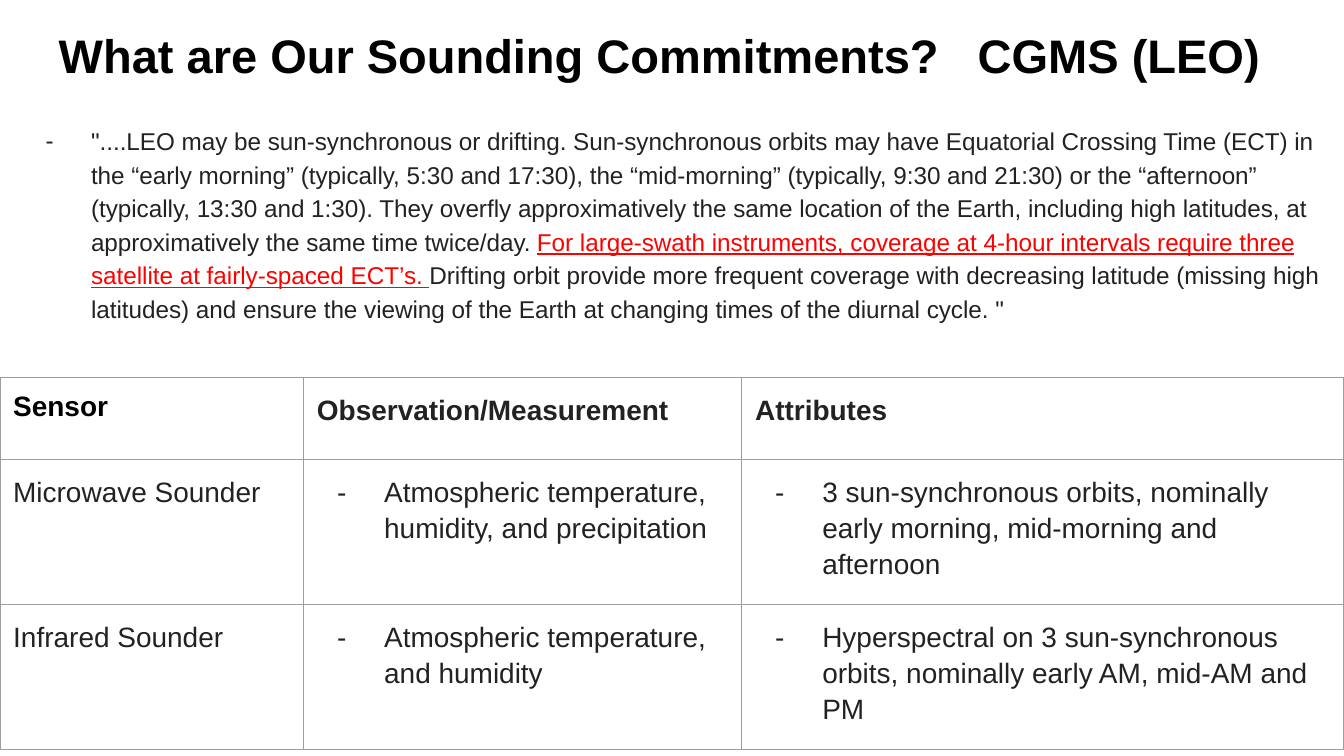
"""Build a slide on low Earth orbit sounding commitments with a sensor table."""
from dataclasses import dataclass

from lxml.etree import SubElement
from pptx import Presentation
from pptx.dml.color import RGBColor
from pptx.enum.text import MSO_ANCHOR, MSO_AUTO_SIZE, PP_ALIGN
from pptx.oxml.ns import qn
from pptx.util import Cm, Pt

BLACK = RGBColor(0x00, 0x00, 0x00)
INK = RGBColor(0x22, 0x22, 0x22)
RED = RGBColor(0xFF, 0x00, 0x00)
GRID = RGBColor(0x9E, 0x9E, 0x9E)
FONT = "Arial"
MARGIN = Cm(0.25)
INDENT = Cm(1.27)
LINE_SPACING = 1.15


@dataclass(frozen=True)
class Span:
    text: str
    color: RGBColor = INK
    underline: bool = False


@dataclass(frozen=True)
class Sensor:
    name: str
    measurement: str
    attributes: str


TITLE = "What are Our Sounding Commitments?   CGMS (LEO)"
QUOTE = (
    Span(
        '"....LEO may be sun-synchronous or drifting. Sun-synchronous orbits may have '
        "Equatorial Crossing Time (ECT) in the “early morning” (typically, 5:30 and 17:30), "
        "the “mid-morning” (typically, 9:30 and 21:30) or the “afternoon” (typically, 13:30 "
        "and 1:30). They overfly approximatively the same location of the Earth, including "
        "high latitudes, at approximatively the same time twice/day. "
    ),
    Span(
        "For large-swath instruments, coverage at 4-hour intervals require three "
        "satellite at fairly-spaced ECT’s. ",
        RED,
        True,
    ),
    Span(
        "Drifting orbit provide more frequent coverage with decreasing latitude (missing "
        "high latitudes) and ensure the viewing of the Earth at changing times of the "
        'diurnal cycle. "'
    ),
)
HEADINGS = ("Sensor", "Observation/Measurement", "Attributes")
SENSORS = (
    Sensor(
        "Microwave Sounder",
        "Atmospheric temperature, humidity, and precipitation",
        "3 sun-synchronous orbits, nominally early morning, mid-morning and afternoon",
    ),
    Sensor(
        "Infrared Sounder",
        "Atmospheric temperature, and humidity",
        "Hyperspectral on 3 sun-synchronous orbits, nominally early AM, mid-AM and PM",
    ),
)
COLUMN_WIDTHS = (Cm(5.74), Cm(8.28), Cm(11.38))
ROW_HEIGHTS = (Cm(1.55), Cm(2.74), Cm(2.74))


def place(box, left: Cm, top: Cm, width: Cm, height: Cm) -> None:
    """Move a placeholder and give it fixed, top-anchored text."""
    box.left, box.top, box.width, box.height = left, top, width, height
    frame = box.text_frame
    frame.word_wrap = True
    frame.auto_size = MSO_AUTO_SIZE.NONE
    frame.vertical_anchor = MSO_ANCHOR.TOP
    set_margins(frame)


def set_margins(holder) -> None:
    """Give a text frame or cell equal margins."""
    holder.margin_left = holder.margin_right = MARGIN
    holder.margin_top = holder.margin_bottom = MARGIN


def set_font(para, size: float, color: RGBColor, bold: bool = False) -> None:
    """Set the font shared by a whole paragraph."""
    para.font.name = FONT
    para.font.size = Pt(size)
    para.font.bold = bold
    para.font.color.rgb = color


def add_dash(para, hang: Cm) -> None:
    """Give a paragraph a hanging dash bullet."""
    properties = para._p.get_or_add_pPr()
    properties.set("marL", str(INDENT))
    properties.set("indent", str(-hang))
    color = SubElement(properties, qn("a:buClr"))
    SubElement(color, qn("a:srgbClr"), val=str(INK))
    SubElement(properties, qn("a:buFont"), typeface=FONT)
    SubElement(properties, qn("a:buChar"), char="-")


def add_borders(cell) -> None:
    """Draw a thin grey line on each side of a cell."""
    properties = cell._tc.get_or_add_tcPr()
    for side in ("lnL", "lnR", "lnT", "lnB"):
        line = SubElement(properties, qn(f"a:{side}"), w=str(Pt(0.75)))
        fill = SubElement(line, qn("a:solidFill"))
        SubElement(fill, qn("a:srgbClr"), val=str(GRID))


def fill_cell(cell, text: str, heading: bool, first: bool) -> None:
    """Write and format one table cell."""
    set_margins(cell)
    add_borders(cell)
    cell.fill.background()
    cell.text = text
    para = cell.text_frame.paragraphs[0]
    corner = heading and first
    para.line_spacing = 1.0 if corner else LINE_SPACING
    if not heading and not first:
        add_dash(para, Cm(0.89))
    set_font(para, 15, BLACK if corner else INK, heading)


def add_title(page) -> None:
    """Fill the title placeholder."""
    box = page.shapes.title
    place(box, Cm(0.86), Cm(0.25), Cm(24.33), Cm(1.83))
    box.text_frame.text = TITLE
    para = box.text_frame.paragraphs[0]
    para.alignment = PP_ALIGN.LEFT
    set_font(para, 25.2, BLACK, True)


def add_quote(page) -> None:
    """Fill the body placeholder with the quoted paragraph."""
    box = page.placeholders[1]
    place(box, Cm(0.2), Cm(2.06), Cm(25), Cm(4.09))
    para = box.text_frame.paragraphs[0]
    para.line_spacing = LINE_SPACING
    para.space_before = Pt(0)
    add_dash(para, Cm(0.86))
    set_font(para, 13, INK)
    for part in QUOTE:
        span = para.add_run()
        span.text = part.text
        span.font.color.rgb = part.color
        span.font.underline = part.underline


def add_sensor_table(page) -> None:
    """Add the table of sensors."""
    rows = (HEADINGS, *((item.name, item.measurement, item.attributes) for item in SENSORS))
    table = page.shapes.add_table(
        len(rows), len(HEADINGS), Cm(0), Cm(7.14), sum(COLUMN_WIDTHS), sum(ROW_HEIGHTS)
    ).table
    table.first_row = table.horz_banding = False
    for column, width in zip(table.columns, COLUMN_WIDTHS):
        column.width = width
    for row, height in zip(table.rows, ROW_HEIGHTS):
        row.height = height
    for row_index, texts in enumerate(rows):
        for column_index, text in enumerate(texts):
            cell = table.cell(row_index, column_index)
            fill_cell(cell, text, row_index == 0, column_index == 0)


def main() -> None:
    """Build and save the deck."""
    deck = Presentation()
    deck.slide_width, deck.slide_height = Cm(25.4), Cm(14.29)
    page = deck.slides.add_slide(deck.slide_layouts[1])
    add_title(page)
    add_quote(page)
    add_sensor_table(page)
    deck.save("out.pptx")


if __name__ == "__main__":
    main()
